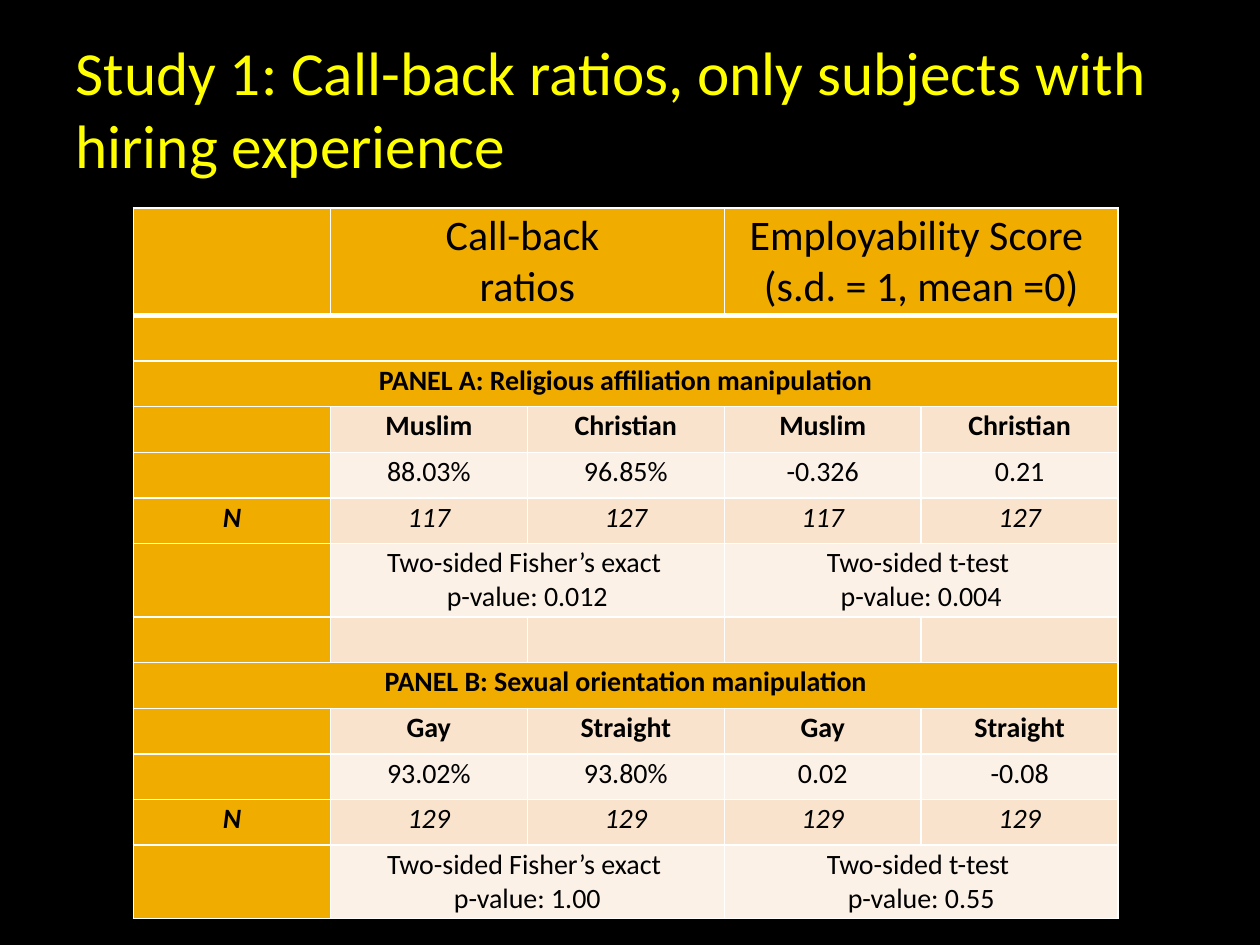
from dataclasses import dataclass

from lxml.etree import SubElement
from pptx import Presentation
from pptx.dml.color import RGBColor
from pptx.enum.text import MSO_ANCHOR, MSO_AUTO_SIZE, PP_ALIGN
from pptx.oxml.ns import qn
from pptx.util import Cm, Pt

FONT = "Calibri"
BLACK, YELLOW, WHITE = "000000", "FFFF00", "FFFFFF"
GOLD, PEACH, CREAM = "F0AD00", "F9E3CC", "FCF1E7"
COLUMNS = 5
COLUMN_WIDTH, HEADER_HEIGHT, ROW_HEIGHT = Cm(3.97), Cm(1.68), Cm(0.92)
MARGINS = {"margin_left": Cm(0.2), "margin_right": Cm(0.2),
           "margin_top": Cm(0.05), "margin_bottom": Cm(0.05)}


@dataclass
class Row:
    """One table row; each text covers `span` columns after the label."""
    texts: tuple[str, ...]
    fill: str
    label: str = ""
    span: int = 1
    size: float = 16
    bold: bool = False
    italic: bool = False


@dataclass
class Panel:
    heading: str
    groups: tuple[str, str]
    scores: tuple[str, str, str, str]
    counts: tuple[str, str]
    p_values: tuple[str, str]

    def rows(self) -> list[Row]:
        fisher, t_test = self.p_values
        tests = (f"Two-sided Fisher’s exact \np-value: {fisher}",
                 f"Two-sided t-test \np-value: {t_test}")
        return [
            banner(self.heading),
            Row(self.groups * 2, PEACH, bold=True),
            Row(self.scores, CREAM),
            Row(self.counts * 2, PEACH, label="N", italic=True),
            Row(tests, CREAM, span=2),
        ]


def banner(text: str) -> Row:
    return Row((), GOLD, label=text, span=COLUMNS, bold=True)


def color(hex_value: str) -> RGBColor:
    return RGBColor.from_string(hex_value)


def set_font(font, size: float, hex_value: str, **styles) -> None:
    formats = {"name": FONT, "size": Pt(size), **styles}
    for attribute, value in formats.items():
        setattr(font, attribute, value)
    font.color.rgb = color(hex_value)


def draw_borders(cell, top: float = 1, bottom: float = 1) -> None:
    properties = cell._tc.get_or_add_tcPr()
    for side, width in {"L": 1, "R": 1, "T": top, "B": bottom}.items():
        line = SubElement(properties, qn(f"a:ln{side}"), w=str(Pt(width)))
        fill = SubElement(line, qn("a:solidFill"))
        SubElement(fill, qn("a:srgbClr"), val=WHITE)


def write_cell(cell, text: str, size: float, bold: bool, italic: bool) -> None:
    paragraph = cell.text_frame.paragraphs[0]
    paragraph.alignment = PP_ALIGN.CENTER
    paragraph.text = text.replace("\n", "\v")
    for run in paragraph.runs:
        set_font(run.font, size, BLACK, bold=bold, italic=italic)


def draw_row(table, index: int, row: Row) -> None:
    is_header = index == 0
    table.rows[index].height = HEADER_HEIGHT if is_header else ROW_HEIGHT
    for column in range(COLUMNS):
        cell = table.cell(index, column)
        draw_borders(cell, top=3 if index == 1 else 1, bottom=3 if is_header else 1)
        cell.fill.solid()
        cell.fill.fore_color.rgb = color(row.fill if column else GOLD)
        for attribute, value in MARGINS.items():
            setattr(cell, attribute, value)
        cell.vertical_anchor = MSO_ANCHOR.MIDDLE if is_header else MSO_ANCHOR.TOP

    # Label column, or the whole row for a banner
    label = table.cell(index, 0)
    if row.span == COLUMNS:
        label.merge(table.cell(index, COLUMNS - 1))
    if row.label:
        write_cell(label, row.label, row.size, True, row.italic)

    # Value columns
    for position, text in enumerate(row.texts):
        first = 1 + position * row.span
        cell = table.cell(index, first)
        if row.span > 1:
            cell.merge(table.cell(index, first + row.span - 1))
        write_cell(cell, text, row.size, row.bold, row.italic)


def draw_title(slide, text: str) -> None:
    title = slide.shapes.title
    place = {"left": Cm(1.27), "top": Cm(0.43), "width": Cm(22.86), "height": Cm(3.48)}
    for attribute, value in place.items():
        setattr(title, attribute, value)
    frame = title.text_frame
    frame.text = text
    formats = {"word_wrap": True, "auto_size": MSO_AUTO_SIZE.NONE,
               "vertical_anchor": MSO_ANCHOR.MIDDLE,
               "margin_left": Cm(0.25), "margin_right": Cm(0.13)}
    for attribute, value in formats.items():
        setattr(frame, attribute, value)
    paragraph = frame.paragraphs[0]
    paragraph.alignment = PP_ALIGN.LEFT
    set_font(paragraph.runs[0].font, 35, YELLOW)


def draw_results(slide, rows: list[Row]) -> None:
    table = slide.shapes.add_table(
        len(rows), COLUMNS, Cm(2.69), Cm(4.19), COLUMN_WIDTH * COLUMNS,
        HEADER_HEIGHT + ROW_HEIGHT * (len(rows) - 1)).table
    table.first_row = table.horz_banding = False
    for column in table.columns:
        column.width = COLUMN_WIDTH
    for index, row in enumerate(rows):
        draw_row(table, index, row)


def main() -> None:
    religion = Panel("PANEL A: Religious affiliation manipulation",
                     ("Muslim", "Christian"), ("88.03%", "96.85%", "-0.326", "0.21"),
                     ("117", "127"), ("0.012", "0.004"))
    orientation = Panel("PANEL B: Sexual orientation manipulation",
                        ("Gay", "Straight"), ("93.02%", "93.80%", "0.02", "-0.08"),
                        ("129", "129"), ("1.00", "0.55"))
    header = Row(("Call-back \nratios", "Employability Score \n(s.d. = 1, mean =0)"),
                 GOLD, span=2, size=24)
    spacer = Row((), PEACH)

    presentation = Presentation()
    presentation.slide_width, presentation.slide_height = Cm(25.4), Cm(19.05)
    slide = presentation.slides.add_slide(presentation.slide_layouts[5])
    slide.background.fill.solid()
    slide.background.fill.fore_color.rgb = color(BLACK)

    draw_results(slide, [header, banner(""), *religion.rows(), spacer, *orientation.rows()])
    draw_title(slide, "Study 1: Call-back ratios, only subjects with hiring experience")
    presentation.save("out.pptx")


if __name__ == "__main__":
    main()
